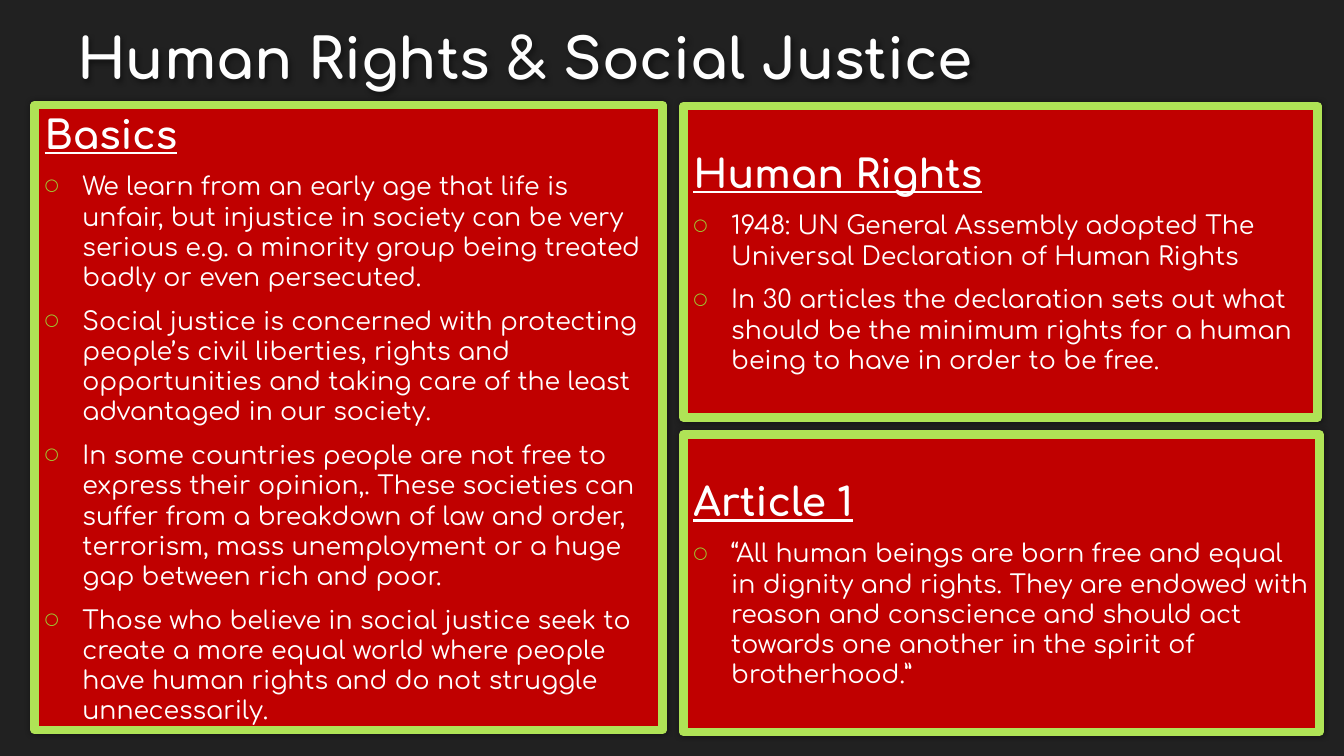
"""Build the Human Rights & Social Justice slide."""
from dataclasses import dataclass

from lxml import etree
from pptx import Presentation
from pptx.dml.color import RGBColor
from pptx.enum.shapes import MSO_SHAPE
from pptx.enum.text import MSO_ANCHOR, MSO_AUTO_SIZE, PP_ALIGN
from pptx.oxml.ns import qn
from pptx.util import Pt

RECT = MSO_SHAPE.RECTANGLE
MIDDLE, BOTTOM = MSO_ANCHOR.MIDDLE, MSO_ANCHOR.BOTTOM
NO_FIT = MSO_AUTO_SIZE.NONE
LEFT = PP_ALIGN.LEFT
FONT = "Comfortaa"
DARK, RED, LIME = "212121", "C00000", "AFE356"
GREEN, WHITE, PALE = "9ECD33", "FFFFFF", "FEFEFE"
INDENT = Pt(27)


@dataclass
class Panel:
    left: float
    top: float
    width: float
    height: float
    head: str
    items: list[str]


PANELS = [
    Panel(24.8, 75, 448.5, 446.5, "Basics", [
        "We learn from an early age that life is unfair, but injustice in society can be "
        "very serious e.g. a minority group being treated badly or even persecuted.",
        "Social justice is concerned with protecting people’s civil liberties, rights and "
        "opportunities and taking care of the least advantaged in our society.",
        "In some countries people are not free to express their opinion,. These societies "
        "can suffer from a breakdown of law and order, terrorism, mass unemployment or a "
        "huge gap between rich and poor.",
        "Those who believe in social justice seek to create a more equal world where people "
        "have human rights and do not struggle unnecessarily.",
    ]),
    Panel(488.2, 75.7, 453, 222.5, "Human Rights", [
        "1948: UN General Assembly adopted The Universal Declaration of Human Rights",
        "In 30 articles the declaration sets out what should be the minimum rights for a "
        "human being to have in order to be free.",
    ]),
    Panel(488.2, 310.3, 454.3, 212.4, "Article 1", [
        "“All human beings are born free and equal in dignity and rights. They are endowed "
        "with reason and conscience and should act towards one another in the spirit of "
        "brotherhood.”",
    ]),
]


def paint(target, color: str) -> None:
    target.rgb = RGBColor.from_string(color)


def style(para, size: float, color: str, bold: bool) -> None:
    para.alignment = LEFT
    for run in para.runs:
        font = run.font
        font.name, font.size, font.bold = FONT, Pt(size), bold
        paint(font.color, color)


def shade(shape, blur: float, dist: float, angle: int) -> None:
    shape.shadow.inherit = False
    effects = shape._element.spPr.find(qn("a:effectLst"))
    cast = etree.SubElement(effects, qn("a:outerShdw"), blurRad=str(Pt(blur)),
                            dist=str(Pt(dist)), dir=str(angle * 60000), rotWithShape="0")
    tint = etree.SubElement(cast, qn("a:srgbClr"), val="000000")
    etree.SubElement(tint, qn("a:alpha"), val="40000")


def indent(para, bullet: bool) -> None:
    props = para._p.get_or_add_pPr()
    props.set("marL", str(INDENT))
    props.set("indent", str(-INDENT))
    if bullet:
        hue = etree.SubElement(props, qn("a:buClr"))
        etree.SubElement(hue, qn("a:srgbClr"), val=GREEN)
        etree.SubElement(props, qn("a:buSzPct"), val="65000")
        etree.SubElement(props, qn("a:buFont"), typeface=FONT)
        etree.SubElement(props, qn("a:buChar"), char="○")


def add_title(slide, text: str) -> None:
    title = slide.shapes.title
    title.left, title.top, title.width, title.height = Pt(48), Pt(0), Pt(864), Pt(68.5)
    shade(title, 4, 2, 45)
    frame = title.text_frame
    frame.text = text
    frame.word_wrap, frame.auto_size = True, NO_FIT
    frame.vertical_anchor = BOTTOM
    para = frame.paragraphs[0]
    para.line_spacing = 1.0
    style(para, 40, PALE, True)


def add_panel(slide, panel: Panel) -> None:
    box = slide.shapes.add_shape(RECT, Pt(panel.left), Pt(panel.top),
                                 Pt(panel.width), Pt(panel.height))
    box.fill.solid()
    paint(box.fill.fore_color, RED)
    box.line.width = Pt(6)
    paint(box.line.color, LIME)
    shade(box, 4, 0, 240)
    frame = box.text_frame
    frame.word_wrap, frame.vertical_anchor = True, MIDDLE
    frame.text = "\n".join([panel.head, *panel.items])
    for row, para in enumerate(frame.paragraphs):
        head = row == 0
        size = 28 if head else 18
        para.space_before, para.space_after = Pt(size * 0.2), Pt(6)
        style(para, size, WHITE, head)
        para.runs[0].font.underline = head
        indent(para, not head)


def main() -> None:
    deck = Presentation()
    deck.slide_width, deck.slide_height = Pt(960), Pt(540)
    slide = deck.slides.add_slide(deck.slide_layouts[5])
    slide.background.fill.solid()
    paint(slide.background.fill.fore_color, DARK)
    add_title(slide, "Human Rights & Social Justice")
    for panel in PANELS:
        add_panel(slide, panel)
    deck.save("out.pptx")


if __name__ == "__main__":
    main()
